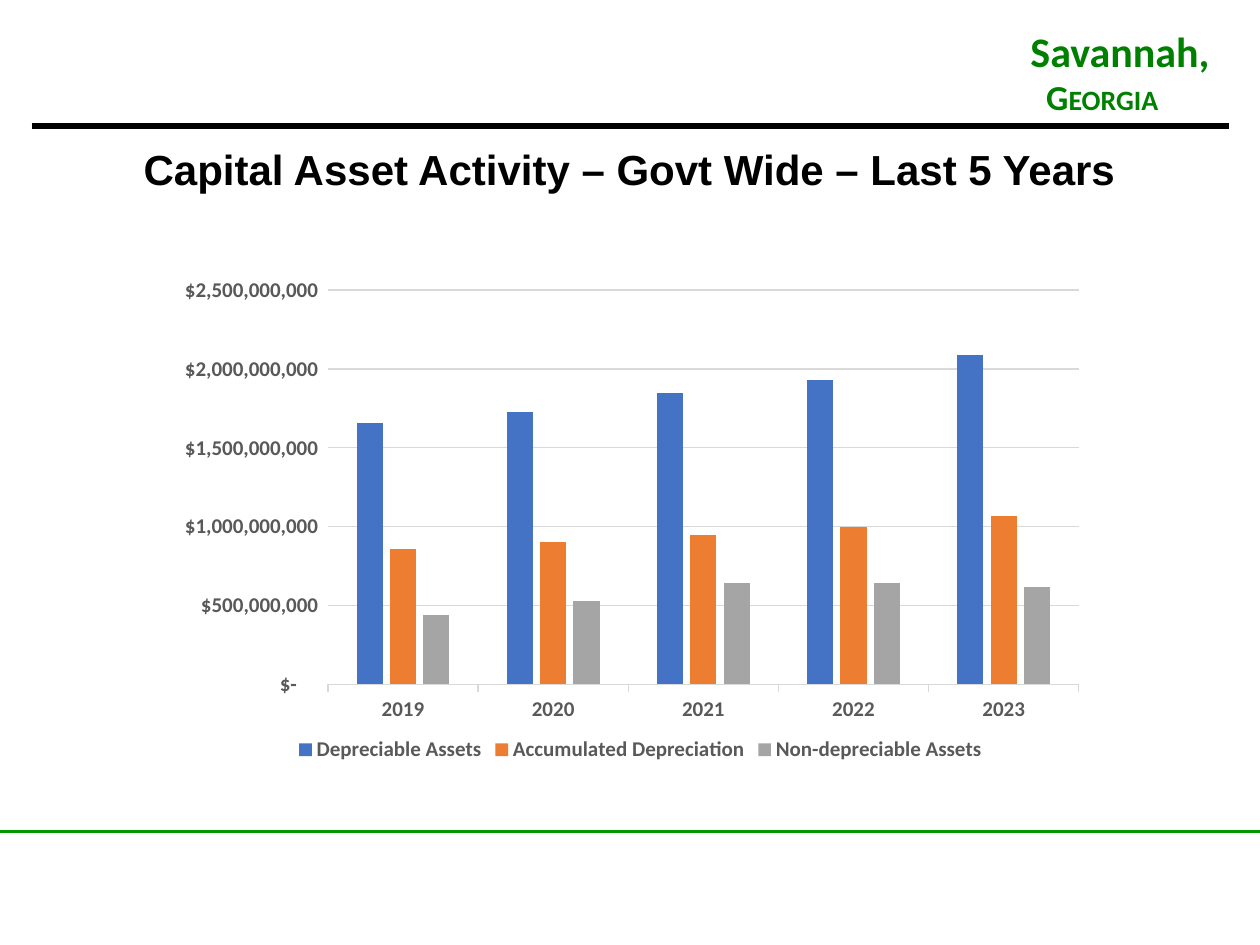
from lxml import etree
from pptx import Presentation
from pptx.chart.data import CategoryChartData
from pptx.dml.color import RGBColor
from pptx.enum.chart import XL_CHART_TYPE, XL_LEGEND_POSITION, XL_TICK_MARK
from pptx.enum.shapes import MSO_CONNECTOR
from pptx.enum.text import MSO_ANCHOR, MSO_AUTO_SIZE, PP_ALIGN
from pptx.oxml import parse_xml
from pptx.oxml.ns import nsdecls, qn
from pptx.util import Pt

# Content
TITLE = "Capital Asset Activity – Govt Wide – Last 5 Years"
YEARS = ["2019", "2020", "2021", "2022", "2023"]
MILLION = 1_000_000
SERIES = [  # name, colour, values in millions of dollars
    ("Depreciable Assets", "blue", [1660, 1730, 1850, 1930, 2090]),
    ("Accumulated Depreciation", "orange", [860, 900, 950, 1000, 1070]),
    ("Non-depreciable Assets", "silver", [440, 530, 640, 640, 620]),
]
DOLLARS = '_("$"* #,##0_);_("$"* \\(#,##0\\);_("$"* "-"??_);_(@_)'
PLOT = {"x": 0.16, "y": 0.147, "w": 0.817, "h": 0.705}
COLORS = {
    "black": "000000", "green": "008000", "rule": "009900", "label": "595959",
    "grid": "D9D9D9", "blue": "4472C4", "orange": "ED7D31", "silver": "A5A5A5",
}
RULES = [  # left, right, top, colour, weight
    (-0.72, 720.72, 475.2, "rule", 2),
    (18, 702, 72, "black", 3),
]


def rgb(name):
    return RGBColor.from_string(COLORS[name])


def style(font, size, color, name="Calibri"):
    font.name, font.size, font.bold = name, Pt(size), True
    font.color.rgb = rgb(color)


def add_run(p, text, size, color, name="Calibri"):
    r = p.add_run()
    r.text = text
    style(r.font, size, color, name)
    return r


def fit(tf):
    tf.word_wrap = False
    tf.auto_size = MSO_AUTO_SIZE.SHAPE_TO_FIT_TEXT
    tf.vertical_anchor = MSO_ANCHOR.TOP


prs = Presentation()
prs.slide_width, prs.slide_height = Pt(720), Pt(540)
s = prs.slides.add_slide(prs.slide_layouts[5])

# Header and footer rules
for left, right, top, color, weight in RULES:
    line = s.shapes.add_connector(
        MSO_CONNECTOR.STRAIGHT, Pt(left), Pt(top), Pt(right), Pt(top))
    line.line.color.rgb = rgb(color)
    line.line.width = Pt(weight)
    etree.SubElement(line._element.spPr, qn("a:effectLst"))

# City name
tf = s.shapes.add_textbox(Pt(581.76), Pt(10.8), Pt(135.36), Pt(60.48)).text_frame
fit(tf)
add_run(tf.paragraphs[0], "Savannah,", 24, "green")
p = tf.add_paragraph()
p._p.get_or_add_pPr().set("marL", str(Pt(9)))
add_run(p, "G", 20, "green")
r = add_run(p, "eorgia", 20, "green")
r.font._element.set("cap", "small")

# Title
sp = s.shapes.title
sp.left, sp.top, sp.width, sp.height = Pt(74.88), Pt(78.48), Pt(575.28), Pt(36)
fit(sp.text_frame)
p = sp.text_frame.paragraphs[0]
p.alignment = PP_ALIGN.LEFT
add_run(p, TITLE, 24, "black", "Arial")

# Column chart
data = CategoryChartData(number_format=DOLLARS)
data.categories = YEARS
for name, _, values in SERIES:
    data.add_series(name, [v * MILLION for v in values])
chart = s.shapes.add_chart(
    XL_CHART_TYPE.COLUMN_CLUSTERED,
    Pt(102.96), Pt(118.8), Pt(525.6), Pt(319.68), data).chart
chart.has_title = False
chart.font.name, chart.font.size = "Calibri", Pt(10)

plot = chart.plots[0]
plot.gap_width, plot.overlap, plot.vary_by_categories = 219, -27, False
for series, (_, color, _) in zip(plot.series, SERIES):
    series.format.fill.solid()
    series.format.fill.fore_color.rgb = rgb(color)

# Axes
cat, val = chart.category_axis, chart.value_axis
for axis in (cat, val):
    style(axis.tick_labels.font, 12, "label")
cat.major_tick_mark = XL_TICK_MARK.OUTSIDE
val.major_tick_mark = XL_TICK_MARK.NONE
val.minimum_scale, val.maximum_scale = 0, 2500 * MILLION
val.major_unit = 500 * MILLION
val.tick_labels.number_format = DOLLARS
val.tick_labels.number_format_is_linked = False
val.format.line.fill.background()
for edge in (cat.format.line, val.major_gridlines.format.line):
    edge.color.rgb = rgb("grid")
    edge.width = Pt(0.75)

# Legend
chart.has_legend = True
chart.legend.position = XL_LEGEND_POSITION.BOTTOM
chart.legend.include_in_layout = False
style(chart.legend.font, 12, "label")

# Fixed inner plot area
modes = "".join(f'<c:{k}Mode val="edge"/>' for k in "xy")
sizes = "".join(f'<c:{k} val="{v}"/>' for k, v in PLOT.items())
area = chart._chartSpace.chart.plotArea
for old in area.findall(qn("c:layout")):
    area.remove(old)
area.insert(0, parse_xml(
    f'<c:layout {nsdecls("c")}><c:manualLayout><c:layoutTarget val="inner"/>'
    f"{modes}{sizes}</c:manualLayout></c:layout>"))

prs.save("out.pptx")
